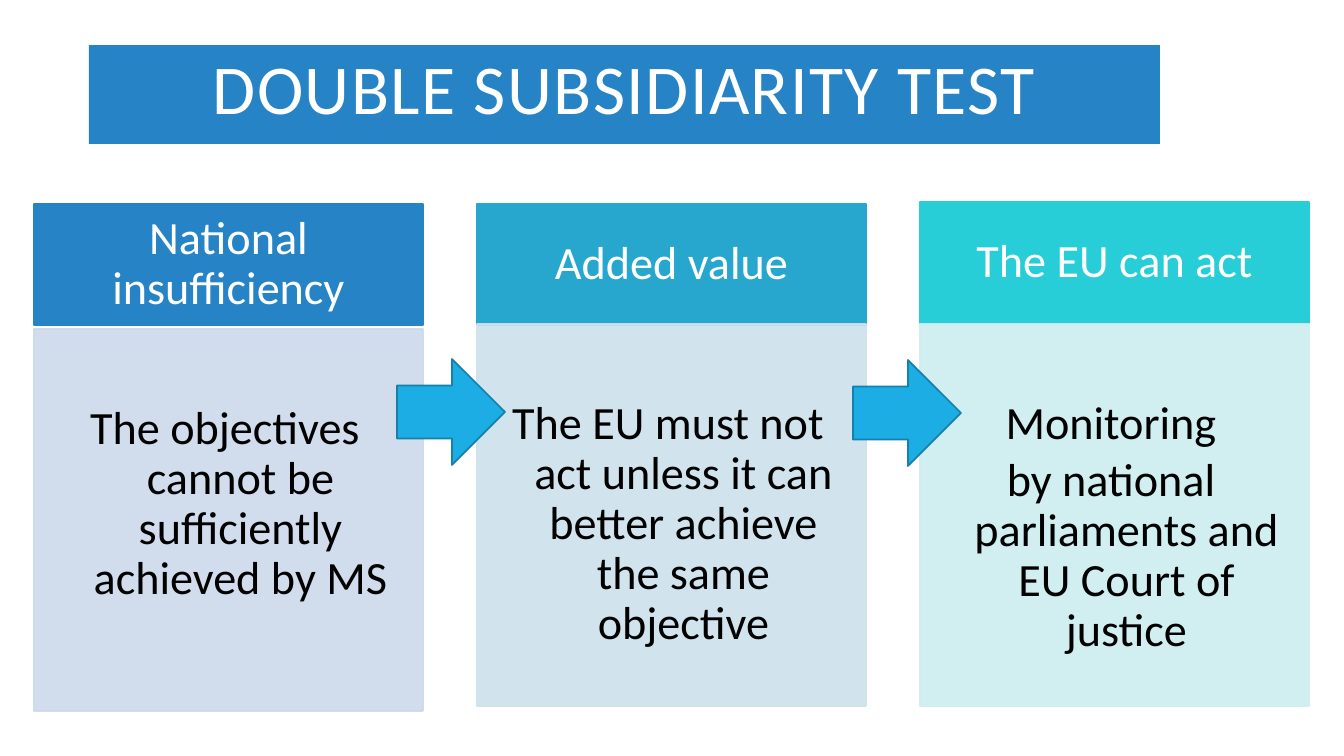
from dataclasses import dataclass
from typing import NamedTuple

from lxml.etree import SubElement
from pptx import Presentation
from pptx.dml.color import RGBColor as Rgb
from pptx.enum.shapes import MSO_SHAPE as Kind
from pptx.enum.text import MSO_ANCHOR as Anchor, PP_ALIGN as Align
from pptx.oxml.ns import qn
from pptx.shapes.autoshape import Shape
from pptx.slide import Slide
from pptx.util import Emu, Pt

SCALE = 914400 / 100.8


def px(count: int) -> Emu:
    return Emu(round(count * SCALE))


@dataclass(frozen=True)
class Theme:
    font: str = "Calibri"
    white: str = "FFFFFF"
    black: str = "000000"
    title: str = "2683C6"
    arrow: str = "1CADE4"
    edge: str = "1580A9"
    title_size: int = 50
    text_size: int = 33
    line: float = 1.25


THEME = Theme()


class Box(NamedTuple):
    left: int
    top: int
    width: int
    height: int


class Inset(NamedTuple):
    left: int
    top: int
    right: int
    bottom: int


@dataclass(frozen=True)
class Style:
    size: int
    color: str
    inset: Inset
    anchor: Anchor = Anchor.MIDDLE
    spacing: float = 0.9
    after: int = 0
    hang: int = 0
    track: int = 0


TITLE = Style(THEME.title_size, THEME.white, Inset(10, 5, 10, 5), spacing=0.8, track=100)
HEAD = Style(THEME.text_size, THEME.white, Inset(26, 15, 26, 15))
BODY = Style(THEME.text_size, THEME.black, Inset(19, 76, 26, 29),
             anchor=Anchor.TOP, after=5, hang=31)


@dataclass(frozen=True)
class Panel:
    head: str
    body: str
    dark: str
    pale: str
    head_top: int
    body_top: int


PANELS = (
    Panel("National insufficiency", "The objectives cannot be sufficiently achieved by MS",
          "2683C6", "CDD9EA", 204, 329),
    Panel("Added value", "The EU must not act unless it can better achieve the same objective",
          "27A7CE", "CDE2ED", 204, 324),
    Panel("The EU can act", "Monitoring\nby national parliaments and EU Court of justice",
          "27CED7", "CDEDF0", 202, 324),
)
LEFT, STEP, WIDTH = 34, 443, 389
HEAD_HEIGHT, BODY_HEIGHT = 121, 382
ARROWS = (Box(397, 359, 108, 106), Box(853, 360, 108, 106))


def fade(shape: Shape, percent: int) -> None:
    """Set the opacity of fill and line."""
    for color in shape.element.spPr.iter(qn("a:srgbClr")):
        SubElement(color, qn("a:alpha"), val=str(percent * 1000))


def draw(slide: Slide, kind: Kind, box: Box, fill: str, edge: str = "") -> Shape:
    shape = slide.shapes.add_shape(kind, *map(px, box))
    shape.shadow.inherit = False
    shape.fill.solid()
    shape.fill.fore_color.rgb = Rgb.from_string(fill)
    if edge:
        shape.line.color.rgb = Rgb.from_string(edge)
        shape.line.width = Pt(THEME.line)
    else:
        shape.line.fill.background()
    return shape


def write(shape: Shape, text: str, style: Style) -> None:
    frame = shape.text_frame
    frame.text = text
    frame.word_wrap = True
    frame.vertical_anchor = style.anchor
    (frame.margin_left, frame.margin_top,
     frame.margin_right, frame.margin_bottom) = map(px, style.inset)
    for para in frame.paragraphs:
        para.alignment = Align.CENTER
        para.line_spacing = style.spacing
        para.space_after = Pt(style.after)
        if style.hang:
            props = para._p.get_or_add_pPr()
            props.set("marL", str(px(style.hang)))
            props.set("indent", str(-px(style.hang)))
        for run in para.runs:
            run.font.name = THEME.font
            run.font.size = Pt(style.size)
            run.font.color.rgb = Rgb.from_string(style.color)
            if style.track:
                run.font._element.set("spc", str(style.track))


def add_panel(slide: Slide, panel: Panel, left: int) -> None:
    top = Box(left, panel.head_top, WIDTH, HEAD_HEIGHT)
    write(draw(slide, Kind.RECTANGLE, top, panel.dark, panel.dark), panel.head, HEAD)
    base = Box(left, panel.body_top, WIDTH, BODY_HEIGHT)
    shape = draw(slide, Kind.RECTANGLE, base, panel.pale, panel.pale)
    fade(shape, 90)
    write(shape, panel.body, BODY)


def main() -> None:
    deck = Presentation()
    deck.slide_width, deck.slide_height = px(1344), px(756)
    slide = deck.slides.add_slide(deck.slide_layouts[6])
    banner = draw(slide, Kind.RECTANGLE, Box(89, 45, 1071, 99), THEME.title)
    write(banner, "DOUBLE SUBSIDIARITY TEST", TITLE)
    for index, panel in enumerate(PANELS):
        add_panel(slide, panel, LEFT + index * STEP)
    for box in ARROWS:
        draw(slide, Kind.RIGHT_ARROW, box, THEME.arrow, THEME.edge)
    deck.save("out.pptx")


if __name__ == "__main__":
    main()
